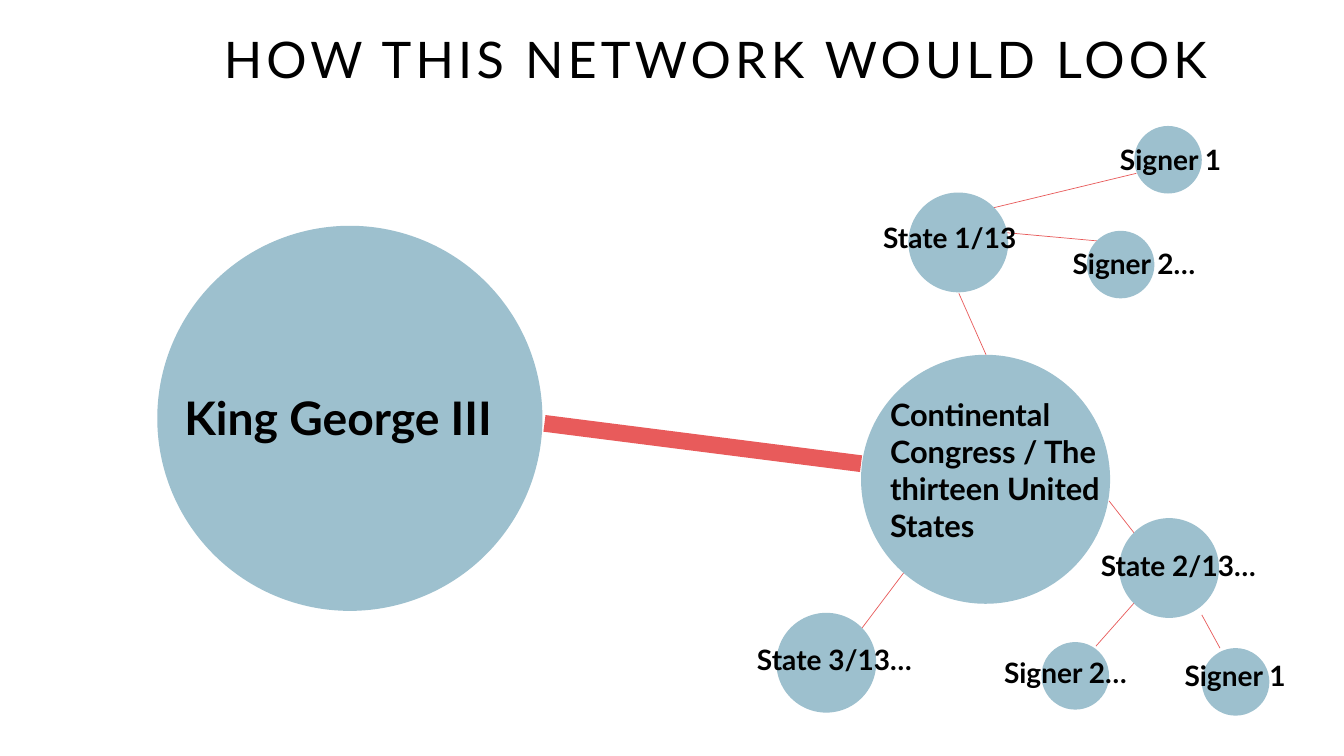
from lxml import etree
from pptx import Presentation
from pptx.dml.color import RGBColor
from pptx.enum import shapes, text
from pptx.oxml import ns
from pptx.util import Inches, Pt

TITLE = "HOW THIS NETWORK WOULD LOOK"
TITLE_BOX = (2.12, 0.29, 10.37, 0.65)
FONT, INK, NODE, LINK = "Lato", "000000", "9DC0CE", "E85B5B"

# Each rank of node: diameter, label size
RANKS = {
    "king": (3.82, 33),
    "congress": (2.47, 22),
    "state": (0.99, 20),
    "signer": (0.67, 20),
}
# Label, rank, circle left and top, label left, top, width and height
NODES = [
    ("King George III", "king", (1.56, 2.24), (1.73, 3.81, 3.42, 1.77)),
    ("Continental Congress / The thirteen United States", "congress",
     (8.54, 3.52), (8.73, 3.88, 2.34, 2.69)),
    ("State 1/13", "state", (9.01, 1.91), (8.66, 2.14, 1.71, 0.44)),
    ("State 2/13…", "state", (11.1, 5.14), (10.82, 5.39, 1.93, 0.44)),
    ("State 3/13…", "state", (7.7, 6.08), (7.41, 6.33, 1.93, 0.44)),
    ("Signer 1", "signer", (11.25, 1.25), (11.01, 1.36, 1.32, 0.44)),
    ("Signer 2…", "signer", (10.78, 2.29), (10.54, 2.4, 1.56, 0.77)),
    ("Signer 1", "signer", (11.92, 6.43), (11.65, 6.48, 1.32, 0.44)),
    ("Signer 2…", "signer", (10.33, 6.37), (9.86, 6.45, 1.56, 0.77)),
]
# Start, end, line width
LINKS = [
    ((8.54, 4.6), (5.4, 4.2), 12),        # Congress to the king
    ((9.51, 2.91), (9.78, 3.52), 0.5),    # State 1 to Congress
    ((11, 4.97), (11.25, 5.29), 0.5),     # Congress to state 2
    ((8.55, 6.23), (8.98, 5.66), 0.5),    # State 3 to Congress
    ((9.86, 2.06), (11.27, 1.72), 0.5),   # State 1 to its signers
    ((9.78, 2.29), (10.88, 2.39), 0.5),
    ((11.92, 6.1), (12.1, 6.43), 0.5),    # State 2 to its signers
    ((10.87, 6.41), (11.25, 5.98), 0.5),
]


def color(value):
    return RGBColor.from_string(value)


def inches(values):
    return [Inches(value) for value in values]


def write(frame, words, size, bold):
    frame.word_wrap = True
    para = frame.paragraphs[0]
    para.alignment = text.PP_ALIGN.LEFT
    span = para.add_run()
    span.text = words
    for name, value in {"name": FONT, "size": Pt(size), "bold": bold}.items():
        setattr(span.font, name, value)
    span.font.color.rgb = color(INK)
    return para, span


def add_title(page):
    title = page.shapes.title
    for name, value in zip(("left", "top", "width", "height"), inches(TITLE_BOX)):
        setattr(title, name, value)
    frame = title.text_frame
    frame.auto_size = text.MSO_AUTO_SIZE.NONE
    frame.vertical_anchor = text.MSO_ANCHOR.BOTTOM
    para, span = write(frame, TITLE, 36, False)
    para.line_spacing = 0.9
    span.font._element.set("spc", "300")


def add_link(page, start, end, width):
    link = page.shapes.add_connector(
        shapes.MSO_CONNECTOR.STRAIGHT, *inches(start + end))
    link.line.color.rgb = color(LINK)
    link.line.width = Pt(width)
    etree.SubElement(link._element.spPr, ns.qn("a:effectLst"))


def add_circle(page, corner, diameter):
    circle = page.shapes.add_shape(
        shapes.MSO_SHAPE.OVAL, *inches(corner + (diameter, diameter)))
    circle.shadow.inherit = False
    circle.fill.solid()
    circle.fill.fore_color.rgb = color(NODE)
    circle.line.fill.background()


def main():
    deck = Presentation()
    deck.slide_width, deck.slide_height = inches((13.33, 7.5))
    page = deck.slides.add_slide(deck.slide_layouts[5])
    add_title(page)

    # Links lie below the circles, labels above them
    for link in LINKS:
        add_link(page, *link)
    for _, rank, corner, _ in NODES:
        add_circle(page, corner, RANKS[rank][0])
    for words, rank, _, place in NODES:
        box = page.shapes.add_textbox(*inches(place))
        write(box.text_frame, words, RANKS[rank][1], True)

    deck.save("out.pptx")


if __name__ == "__main__":
    main()
